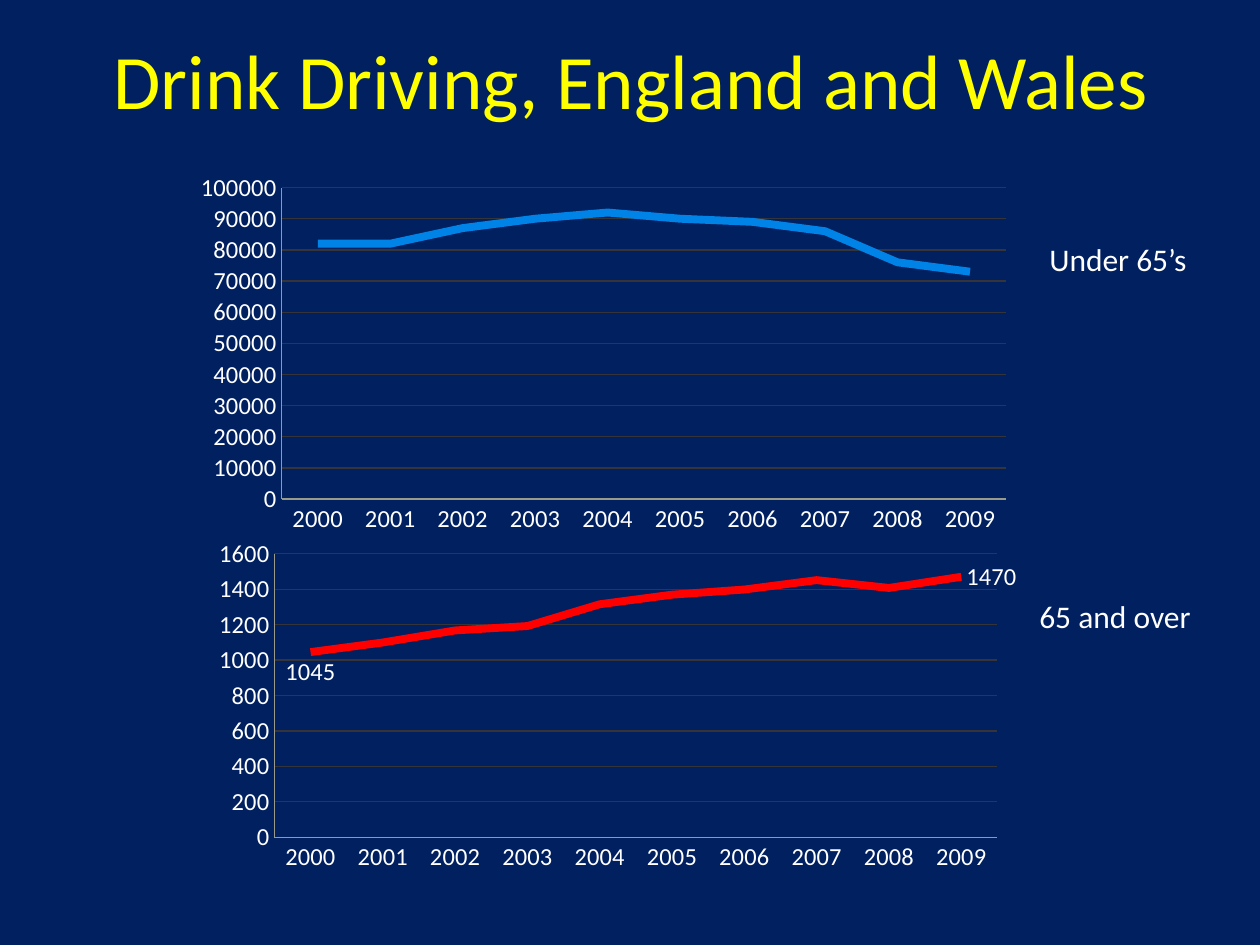
from pptx import Presentation
from pptx.chart.data import CategoryChartData
from pptx.dml.color import RGBColor
from pptx.enum.chart import XL_CHART_TYPE as ChartType
from pptx.enum.chart import XL_LABEL_POSITION as LabelPos
from pptx.enum.chart import XL_TICK_MARK as TickMark
from pptx.enum.text import MSO_ANCHOR, PP_ALIGN
from pptx.util import Inches, Pt

NAVY = RGBColor(0x00, 0x20, 0x60)
YELLOW = RGBColor(0xFF, 0xFF, 0x00)
WHITE = RGBColor(0xFF, 0xFF, 0xFF)
RED = RGBColor(0xFF, 0x00, 0x00)
BLUE = RGBColor(0x00, 0x83, 0xE6)
GRID = RGBColor(0x34, 0x34, 0x39)
AXIS = RGBColor(0x9A, 0x9A, 0x8A)

FONT = "Calibri"
YEARS = [str(year) for year in range(2000, 2010)]
UNDER_65 = [82000, 82000, 87000, 90000, 92000, 90000, 89000, 86000, 76000, 73000]
OVER_65 = [1045, 1099, 1167, 1192, 1315, 1369, 1398, 1451, 1407, 1470]


def style_font(font, size, color):
    font.name = FONT
    font.size = Pt(size)
    font.color.rgb = color


def set_title(slide, text):
    title = slide.shapes.title
    title.left, title.top = Inches(0.51), Inches(0)
    title.width, title.height = Inches(9), Inches(1.25)
    tf = title.text_frame
    tf.text = text
    tf.vertical_anchor = MSO_ANCHOR.MIDDLE
    p = tf.paragraphs[0]
    p.alignment = PP_ALIGN.CENTER
    style_font(p.font, 44, YELLOW)


def add_label(slide, text, x, y, w):
    tf = slide.shapes.add_textbox(Inches(x), Inches(y), Inches(w), Inches(0.4)).text_frame
    tf.word_wrap = False
    tf.text = text
    style_font(tf.paragraphs[0].font, 18, WHITE)


def add_line_chart(slide, values, color, box, top_value, step):
    data = CategoryChartData()
    data.categories = YEARS
    data.add_series("Series 1", values)
    x, y, w, h = map(Inches, box)
    chart = slide.shapes.add_chart(ChartType.LINE, x, y, w, h, data).chart
    chart.has_legend = False
    chart.has_title = False
    style_font(chart.font, 14, WHITE)

    for axis in (chart.category_axis, chart.value_axis):
        axis.major_tick_mark = axis.minor_tick_mark = TickMark.NONE
        axis.format.line.color.rgb = AXIS
    value_axis = chart.value_axis
    value_axis.minimum_scale = 0
    value_axis.maximum_scale = top_value
    value_axis.major_unit = step
    grid = value_axis.major_gridlines.format.line
    grid.color.rgb = GRID
    grid.width = Pt(0.75)

    series = chart.plots[0].series[0]
    series.smooth = False
    series.format.line.color.rgb = color
    series.format.line.width = Pt(4.5)
    return series


def label_point(series, index, position):
    label = series.points[index].data_label
    style_font(label.font, 14, WHITE)
    label.position = position


def main():
    prs = Presentation()
    prs.slide_width, prs.slide_height = Inches(10), Inches(7.5)
    slide = prs.slides.add_slide(prs.slide_layouts[5])
    slide.background.fill.solid()
    slide.background.fill.fore_color.rgb = NAVY

    set_title(slide, "Drink Driving, England and Wales")
    over = add_line_chart(slide, OVER_65, RED, (1.61, 4.22, 6.46, 2.76), 1600, 200)
    label_point(over, 0, LabelPos.BELOW)
    label_point(over, len(YEARS) - 1, LabelPos.RIGHT)
    add_line_chart(slide, UNDER_65, BLUE, (1.46, 1.31, 6.66, 2.99), 100000, 10000)
    add_label(slide, "65 and over", 8.15, 4.69, 1.42)
    add_label(slide, "Under 65’s", 8.23, 1.86, 1.3)
    prs.save("out.pptx")


if __name__ == "__main__":
    main()
